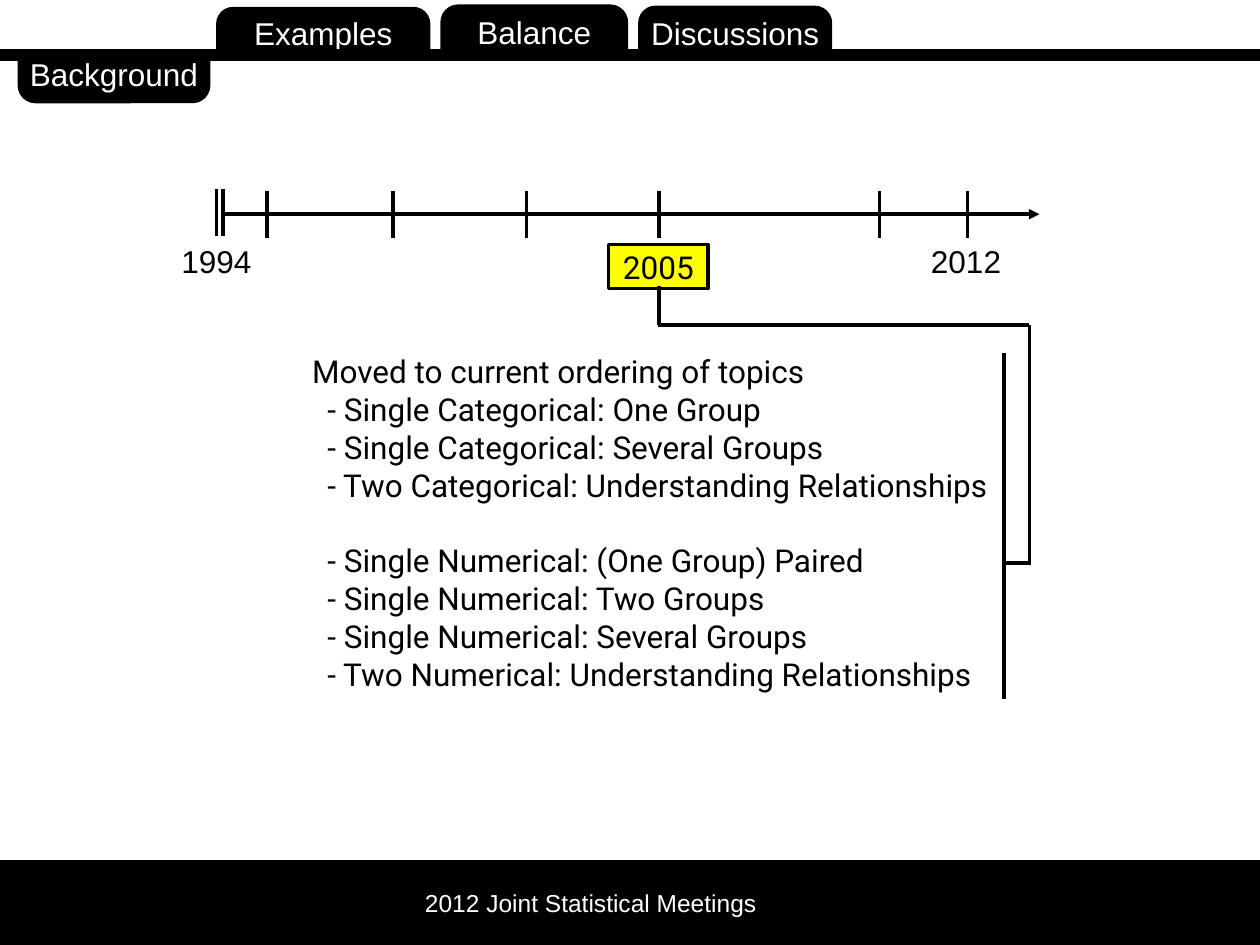
from pptx import Presentation
from pptx.dml.color import RGBColor
from pptx.enum.shapes import MSO_CONNECTOR, MSO_SHAPE
from pptx.enum.text import MSO_ANCHOR, PP_ALIGN
from pptx.oxml.ns import qn
from pptx.util import Inches, Pt
from lxml import etree

RECT = MSO_SHAPE.RECTANGLE
TAB = MSO_SHAPE.ROUND_2_SAME_RECTANGLE
LINE = MSO_CONNECTOR.STRAIGHT
MIDDLE = MSO_ANCHOR.MIDDLE
LEFT, CENTER = PP_ALIGN.LEFT, PP_ALIGN.CENTER
BLACK, WHITE, YELLOW = "000000", "FFFFFF", "FFFF00"

# Content
FOOTER = "2012 Joint Statistical Meetings"
TABS = [  # label, left, top, width
    ("Examples", 1.72, 0.06, 1.69),
    ("Balance", 3.5, 0.04, 1.48),
    ("Discussions", 5.07, 0.05, 1.53),
]
ACTIVE = "Background"
YEARS = [("1994", 1.34), ("2012", 7.29)]
YEAR = "2005"
HEAD = "Moved to current ordering of topics"
GROUPS = [
    ["Single Categorical: One Group",
     "Single Categorical: Several Groups",
     "Two Categorical: Understanding Relationships"],
    ["Single Numerical: (One Group) Paired",
     "Single Numerical: Two Groups",
     "Single Numerical: Several Groups",
     "Two Numerical: Understanding Relationships"],
]

# Timeline and bracket geometry
AXIS = 1.7
STARTS = [1.72, 1.77]
TICKS = [2.12, 3.12, 4.18, 5.23, 6.98, 7.68]
LINKS = [
    (5.23, 2.27, 5.23, 2.58),
    (5.22, 2.58, 8.17, 2.58),
    (8.17, 2.58, 8.17, 4.47),
    (7.97, 4.47, 8.18, 4.47),
    (7.97, 2.8, 7.97, 5.55),
]

deck = Presentation()
deck.slide_width, deck.slide_height = Inches(10), Inches(7.5)
slide = deck.slides.add_slide(deck.slide_layouts[6])
shapes = slide.shapes


def color(code):
    return RGBColor.from_string(code)


def add_run(para, text, size=18, font="Arial", ink=BLACK, align=LEFT):
    para.alignment = align
    run = para.add_run()
    run.text = text
    run.font.size, run.font.name = Pt(size), font
    run.font.color.rgb = color(ink)


def add_box(kind, x, y, w, h, fill=BLACK, edge=0.0):
    box = shapes.add_shape(kind, Inches(x), Inches(y), Inches(w), Inches(h))
    box.shadow.inherit = False
    box.fill.solid()
    box.fill.fore_color.rgb = color(fill)
    if edge:
        box.line.color.rgb = color(BLACK)
        box.line.width = Pt(edge)
    else:
        box.line.fill.background()
    return box


def label(box, text, right=0.0, **style):
    frame = box.text_frame
    frame.word_wrap = False
    frame.vertical_anchor = MIDDLE
    frame.margin_left = frame.margin_top = frame.margin_bottom = 0
    frame.margin_right = Inches(right)
    add_run(frame.paragraphs[0], text, align=CENTER, **style)


def add_text(x, y, w, h):
    frame = shapes.add_textbox(Inches(x), Inches(y), Inches(w), Inches(h)).text_frame
    frame.word_wrap = True
    return frame


def add_line(x1, y1, x2, y2, arrow=False):
    line = shapes.add_connector(LINE, Inches(x1), Inches(y1), Inches(x2), Inches(y2))
    line.line.color.rgb = color(BLACK)
    line.line.width = Pt(2)
    if arrow:
        etree.SubElement(line.line._get_or_add_ln(), qn("a:tailEnd"), type="triangle")
    etree.SubElement(line._element.spPr, qn("a:effectLst"))


# Footer
label(add_box(RECT, 0, 6.83, 10, 0.67, edge=0.75), FOOTER, right=0.62, size=14, ink=WHITE)

# Navigation tabs and bar
for name, x, y, w in TABS:
    tab = add_box(TAB, x, y, w, 0.43 - y, edge=0.75)
    tab.adjustments[0] = 0.35
    label(tab, name, ink=WHITE)
add_box(RECT, 0, 0.39, 10, 0.09, edge=0.75)
tab = add_box(TAB, 0.14, 0.39, 1.53, 0.43)
tab.adjustments[0], tab.adjustments[1] = 0, 0.33
label(tab, ACTIVE, ink=WHITE)

# Timeline
add_line(STARTS[-1], AXIS, 8.25, AXIS, arrow=True)
for x in STARTS:
    add_line(x, 1.5, x, 1.87)
for x in TICKS:
    add_line(x, 1.52, x, 1.89)
for year, x in YEARS:
    add_run(add_text(x, 1.87, 0.79, 0.45).paragraphs[0], year)
label(add_box(RECT, 4.83, 1.94, 0.79, 0.35, YELLOW, 2), YEAR, font="Roboto")

# Bracket from the year to the topics
for ends in LINKS:
    add_line(*ends)

# Topics
frame = add_text(2.38, 2.54, 5.74, 3.21)
frame.vertical_anchor = MIDDLE
add_run(frame.paragraphs[0], HEAD, font="Roboto")
for g, group in enumerate(GROUPS):
    for t, topic in enumerate(group):
        para = frame.add_paragraph()
        para._p.get_or_add_pPr().set("marL", str(Inches(0.12)))
        if g and not t:
            para.space_before = Pt(21.6)
        add_run(para, "- " + topic, font="Roboto")

deck.save("out.pptx")
